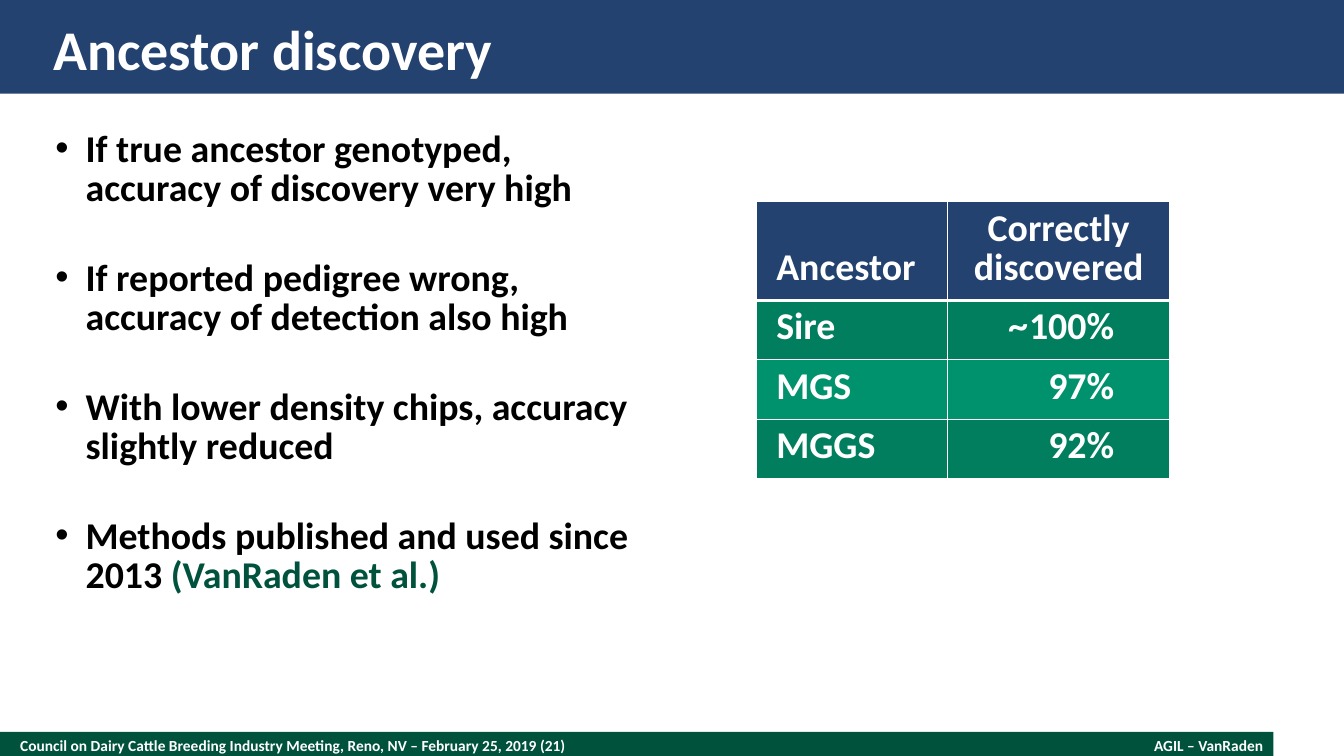
"""Build the ancestor discovery slide."""
from dataclasses import dataclass

from lxml.etree import SubElement as Sub
from pptx import Presentation
from pptx.dml.color import RGBColor as Rgb
from pptx.enum.shapes import MSO_SHAPE as Shape
from pptx.enum.text import MSO_ANCHOR as Anchor, PP_ALIGN as Align
from pptx.oxml.ns import qn
from pptx.slide import Slide
from pptx.util import Inches, Pt

HUES = {"navy": "244270", "green": "00523C", "dark": "007E5D",
        "light": "00926C", "white": "FFFFFF", "black": "000000"}
LEAD = Pt(28)


@dataclass
class Bar:
    top: float
    width: float
    height: float
    hue: str


@dataclass
class Label:
    text: str
    left: float
    top: float
    width: float
    height: float
    size: int
    align: Align = Align.LEFT


@dataclass
class Row:
    name: str
    rate: str
    height: float
    hue: str


BARS = [Bar(7.26, 12.63, 0.27, "green"), Bar(0, 13.33, 0.93, "navy")]
LABELS = [
    Label("Council on Dairy Cattle Breeding Industry Meeting, Reno, NV – February 25, 2019 (21)",
          0.2, 7.26, 8.67, 0.27, 11),
    Label("AGIL – VanRaden", 9.6, 7.3, 2.93, 0.19, 11, Align.RIGHT),
    Label("Ancestor discovery", 0.53, 0.13, 12.27, 0.7, 40),
]
POINTS = [
    "If true ancestor genotyped, accuracy of discovery very high",
    "If reported pedigree wrong, accuracy of detection also high",
    "With lower density chips, accuracy slightly reduced",
    "Methods published and used since 2013 ",
]
CITE = "(VanRaden et al.)"
ROWS = [
    Row("Ancestor", "Correctly discovered", 0.98, "navy"),
    Row("Sire", "~100%", 0.59, "dark"),
    Row("MGS", "97%", 0.59, "light"),
    Row("MGGS", "92%", 0.59, "dark"),
]


def color(hue: str) -> Rgb:
    return Rgb.from_string(HUES[hue])


def style(run, size: int, hue: str, face: str = "Calibri") -> None:
    font = run.font
    font.name, font.size, font.bold = face, Pt(size), True
    font.color.rgb = color(hue)


def add_bar(slide: Slide, bar: Bar) -> None:
    shape = slide.shapes.add_shape(Shape.RECTANGLE, 0, Inches(bar.top),
                                   Inches(bar.width), Inches(bar.height))
    shape.shadow.inherit = False
    shape.fill.solid()
    shape.fill.fore_color.rgb = color(bar.hue)
    shape.line.fill.background()


def add_frame(slide: Slide, left: float, top: float, width: float, height: float):
    box = slide.shapes.add_textbox(Inches(left), Inches(top), Inches(width), Inches(height))
    frame = box.text_frame
    frame.word_wrap = True
    frame.margin_left = frame.margin_right = frame.margin_top = frame.margin_bottom = 0
    return frame


def add_label(slide: Slide, label: Label) -> None:
    frame = add_frame(slide, label.left, label.top, label.width, label.height)
    frame.vertical_anchor = Anchor.MIDDLE
    frame.text = label.text
    para = frame.paragraphs[0]
    para.alignment = label.align
    style(para.runs[0], label.size, "white")


def add_points(slide: Slide) -> None:
    frame = add_frame(slide, 0.55, 1.3, 5.87, 5.6)
    for i, text in enumerate(POINTS):
        para = frame.add_paragraph() if i else frame.paragraphs[0]
        para.text = text
        props = para._p.get_or_add_pPr()
        props.set("marL", str(Inches(0.3)))
        props.set("indent", str(Inches(-0.3)))
        Sub(props, qn("a:buFont"), typeface="Arial")
        Sub(props, qn("a:buChar"), char="•")
        para.line_spacing, para.space_after = LEAD, Pt(36)
        style(para.runs[0], 27, "black")
    cite = para.add_run()
    cite.text = CITE
    style(cite, 27, "green")


def add_edge(cell, side: str, width: int) -> None:
    line = Sub(cell._tc.get_or_add_tcPr(), qn(f"a:ln{side}"), w=str(Pt(width)))
    Sub(Sub(line, qn("a:solidFill")), qn("a:srgbClr"), val=HUES["white"])


def fill_cell(cell, text: str, hue: str, head: bool, below: bool, rate: bool) -> None:
    for side in "LRTB":
        thick = (head and side == "B") or (below and side == "T")
        add_edge(cell, side, 3 if thick else 1)
    cell.fill.solid()
    cell.fill.fore_color.rgb = color(hue)
    cell.margin_left = Inches(0.2)
    cell.margin_right = Inches(0.55 if rate and not head else 0.2)
    cell.margin_top = cell.margin_bottom = Inches(0.1)
    cell.vertical_anchor = Anchor.BOTTOM if head else Anchor.TOP
    para = cell.text_frame.paragraphs[0]
    para.line_spacing = LEAD
    if rate:
        para.alignment = Align.CENTER if head else Align.RIGHT
    parts = ["~", text[1:]] if text.startswith("~") else [text]
    for part in parts:
        run = para.add_run()
        run.text = part
        style(run, 27, "white", "Lato" if part == "~" else "Calibri")


def add_rates(slide: Slide) -> None:
    table = slide.shapes.add_table(len(ROWS), 2, Inches(7.5), Inches(2),
                                   Inches(4.1), Inches(2.75)).table
    for col, width in zip(table.columns, (1.9, 2.2)):
        col.width = Inches(width)
    for i, row in enumerate(ROWS):
        table.rows[i].height = Inches(row.height)
        for j, text in enumerate((row.name, row.rate)):
            fill_cell(table.cell(i, j), text, row.hue, i == 0, i == 1, j == 1)


def main() -> None:
    deck = Presentation()
    deck.slide_width, deck.slide_height = Inches(13.33), Inches(7.5)
    slide = deck.slides.add_slide(deck.slide_layouts[6])
    for bar in BARS:
        add_bar(slide, bar)
    for label in LABELS:
        add_label(slide, label)
    add_points(slide)
    add_rates(slide)
    deck.save("out.pptx")


if __name__ == "__main__":
    main()
